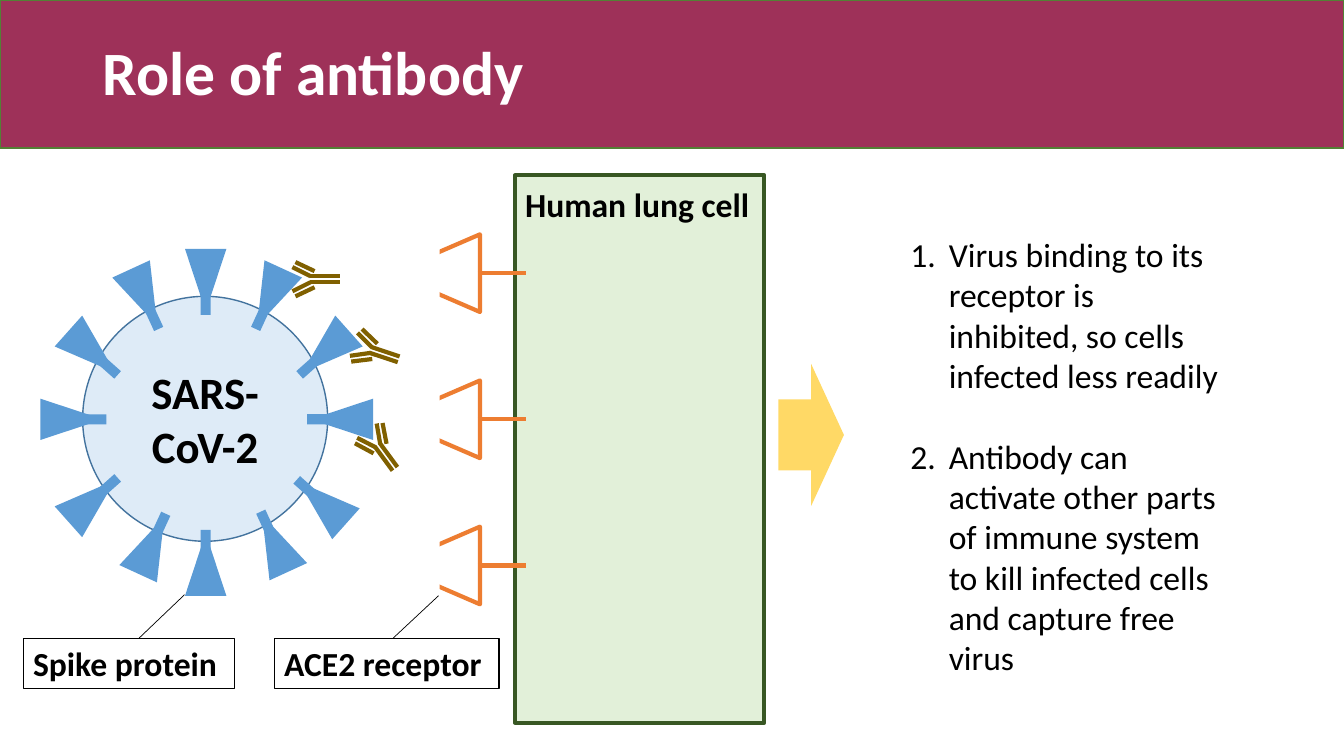
from dataclasses import dataclass
from math import cos, radians, sin

from lxml.etree import SubElement
from pptx import Presentation
from pptx.dml.color import RGBColor
from pptx.enum.shapes import MSO_CONNECTOR, MSO_SHAPE as Preset
from pptx.enum.text import MSO_ANCHOR as Anchor, MSO_AUTO_SIZE as AutoSize, PP_ALIGN as Align
from pptx.oxml.ns import qn
from pptx.util import Inches, Pt

SPIKE_BLUE = "5B9BD5"
RECEPTOR_ORANGE = "ED7D31"
ANTIBODY_BROWN = "806000"
BLACK = "000000"
WHITE = "FFFFFF"


@dataclass
class Spike:
    x: float
    y: float
    angle: float  # outward direction, clockwise from the top


@dataclass
class Antibody:
    x: float
    y: float
    angle: float


@dataclass
class Callout:
    text: str
    left: float
    width: float
    start: tuple[float, float]
    end: tuple[float, float]


SPIKES = [
    Spike(2.04, 2.78, 0), Spike(2.68, 2.95, 24.7), Spike(3.23, 3.49, 48.3),
    Spike(3.39, 4.16, 90), Spike(3.2, 4.99, 131.7), Spike(2.73, 5.39, 155.3),
    Spike(2.04, 5.6, 180), Spike(1.5, 5.41, 204.7), Spike(0.91, 4.97, 228.3),
    Spike(0.71, 4.16, 270), Spike(0.91, 3.49, 311.7), Spike(1.43, 2.95, 335.3),
]
ANTIBODIES = [Antibody(3.07, 2.77, 0), Antibody(3.67, 3.47, 18.4), Antibody(3.74, 4.41, 53.7)]
# Upper half of an antibody, measured from its joint: stem, inner arm, outer arm
ANTIBODY_STROKES = [
    ((0, -0.03), (0.3, -0.03)),
    ((-0.17, -0.12), (0.01, -0.03)),
    ((-0.14, -0.17), (0.05, -0.08)),
]
CALLOUTS = [
    Callout("Spike protein", 0.23, 2.1, (1.38, 6.33), (1.83, 5.9)),
    Callout("ACE2 receptor", 2.72, 2.23, (3.9, 6.33), (4.35, 5.91)),
]
EFFECTS = [
    "Virus binding to its receptor is inhibited, so cells infected less readily",
    "Antibody can activate other parts of immune system to kill infected cells "
    "and capture free virus",
]


def colour(value: str) -> RGBColor:
    return RGBColor.from_string(value)


def place(shape, left: float, top: float, width: float, height: float) -> None:
    shape.left, shape.top = Inches(left), Inches(top)
    shape.width, shape.height = Inches(width), Inches(height)


def write(shape, text: str, *, size: float = 24, bold: bool = True, color: str = BLACK,
          align: Align = Align.LEFT, anchor: Anchor = Anchor.TOP, spacing: float = 1.0) -> None:
    """Fill a shape with text, one paragraph a line."""
    frame = shape.text_frame
    frame.word_wrap = True
    frame.auto_size = AutoSize.NONE
    frame.vertical_anchor = anchor
    frame.text = text
    for para in frame.paragraphs:
        para.alignment = align
        para.line_spacing = spacing
        para.space_before = para.space_after = Pt(0)
        for span in para.runs:
            span.font.name = "Calibri"
            span.font.size = Pt(size)
            span.font.bold = bold
            span.font.color.rgb = colour(color)


def add_preset(shapes, preset: Preset, left: float, top: float, width: float, height: float, *,
               fill: str | None = None, line: str | None = None, weight: float = 1,
               rotation: float = 0):
    shape = shapes.add_shape(preset, Inches(left), Inches(top), Inches(width), Inches(height))
    shape.shadow.inherit = False
    shape.rotation = rotation
    if fill:
        shape.fill.solid()
        shape.fill.fore_color.rgb = colour(fill)
    else:
        shape.fill.background()
    if line:
        shape.line.color.rgb = colour(line)
        shape.line.width = Pt(weight)
    else:
        shape.line.fill.background()
    return shape


def add_line(shapes, start: tuple[float, float], end: tuple[float, float],
             color: str, weight: float) -> None:
    line = shapes.add_connector(MSO_CONNECTOR.STRAIGHT, *(Inches(v) for v in (*start, *end)))
    line.line.color.rgb = colour(color)
    line.line.width = Pt(weight)
    SubElement(line._element.spPr, qn("a:effectLst"))


def add_spike(shapes, spike: Spike) -> None:
    """Draw a stalk and, a little further out, a head whose base faces outward."""
    turn = radians(spike.angle)
    stalk_x, stalk_y = spike.x - 0.17 * sin(turn), spike.y + 0.17 * cos(turn)
    add_preset(shapes, Preset.RECTANGLE, stalk_x - 0.05, stalk_y - 0.175, 0.1, 0.35,
               fill=SPIKE_BLUE, rotation=spike.angle)
    add_preset(shapes, Preset.ISOSCELES_TRIANGLE, spike.x - 0.205, spike.y - 0.31, 0.41, 0.62,
               fill=SPIKE_BLUE, rotation=spike.angle + 180)


def add_receptor(shapes, middle: float) -> None:
    """Draw a triangle on a stem, with its tip hidden by a white block."""
    add_preset(shapes, Preset.ISOSCELES_TRIANGLE, 3.93, middle - 0.445, 0.77, 0.89,
               line=RECEPTOR_ORANGE, weight=3, rotation=270)
    add_line(shapes, (4.74, middle), (5.22, middle), RECEPTOR_ORANGE, 3)
    add_preset(shapes, Preset.RECTANGLE, 3.73, middle - 0.38, 0.63, 0.77, fill=WHITE)


def add_antibody(shapes, antibody: Antibody) -> None:
    turn = radians(antibody.angle)

    def turned(x: float, y: float) -> tuple[float, float]:
        return (antibody.x + x * cos(turn) - y * sin(turn),
                antibody.y + x * sin(turn) + y * cos(turn))

    for side in (1, -1):
        for (x1, y1), (x2, y2) in ANTIBODY_STROKES:
            add_line(shapes, turned(x1, side * y1), turned(x2, side * y2), ANTIBODY_BROWN, 3)


def number(para) -> None:
    properties = para._p.get_or_add_pPr()
    properties.set("marL", str(Inches(0.38)))
    properties.set("indent", str(-Inches(0.38)))
    SubElement(properties, qn("a:buFont"), typeface="+mj-lt")
    SubElement(properties, qn("a:buAutoNum"), type="arabicPeriod")


def main() -> None:
    deck = Presentation()
    deck.slide_width, deck.slide_height = Inches(13.33), Inches(7.5)
    page = deck.slides.add_slide(deck.slide_layouts[1])
    shapes = page.shapes

    title, effects = page.placeholders
    place(title, 0.92, 0.02, 11.5, 1.45)
    write(title, "Role of antibody", size=44, color=WHITE, anchor=Anchor.MIDDLE, spacing=0.9)
    banner = add_preset(shapes, Preset.RECTANGLE, 0, 0, 13.33, 1.47, fill="9E3159", line="538035")
    title._element.addprevious(banner._element)

    place(effects, 8.93, 2.27, 3.3, 4.54)
    write(effects, "\n".join(EFFECTS), bold=False)
    for para in effects.text_frame.paragraphs:
        number(para)
    effects.text_frame.paragraphs[1].space_before = Pt(28.8)

    virus = shapes.add_group_shape().shapes
    body = add_preset(virus, Preset.OVAL, 0.82, 2.94, 2.43, 2.43, fill="DEEBF7", line="43739E")
    write(body, "SARS-CoV-2", size=32, align=Align.CENTER, anchor=Anchor.MIDDLE)
    for spike in SPIKES:
        add_spike(virus, spike)

    add_preset(shapes, Preset.RECTANGLE, 5.11, 1.74, 2.47, 5.43,
               fill="E2F0D9", line="385723", weight=3)
    cell_label = shapes.add_textbox(Inches(5.11), Inches(1.78), Inches(2.47), Inches(0.5))
    write(cell_label, "Human lung cell")

    for row in range(3):
        add_receptor(shapes.add_group_shape().shapes, 2.71 + 1.45 * row)
    for callout in CALLOUTS:
        label = add_preset(shapes, Preset.RECTANGLE, callout.left, 6.33, callout.width, 0.5,
                           line=BLACK, weight=0.75)
        write(label, callout.text)
        add_line(shapes, callout.start, callout.end, BLACK, 0.5)
    for antibody in ANTIBODIES:
        add_antibody(shapes.add_group_shape().shapes, antibody)
    add_preset(shapes, Preset.RIGHT_ARROW, 7.72, 3.61, 0.65, 1.41, fill="FFD966")

    deck.save("out.pptx")


if __name__ == "__main__":
    main()
